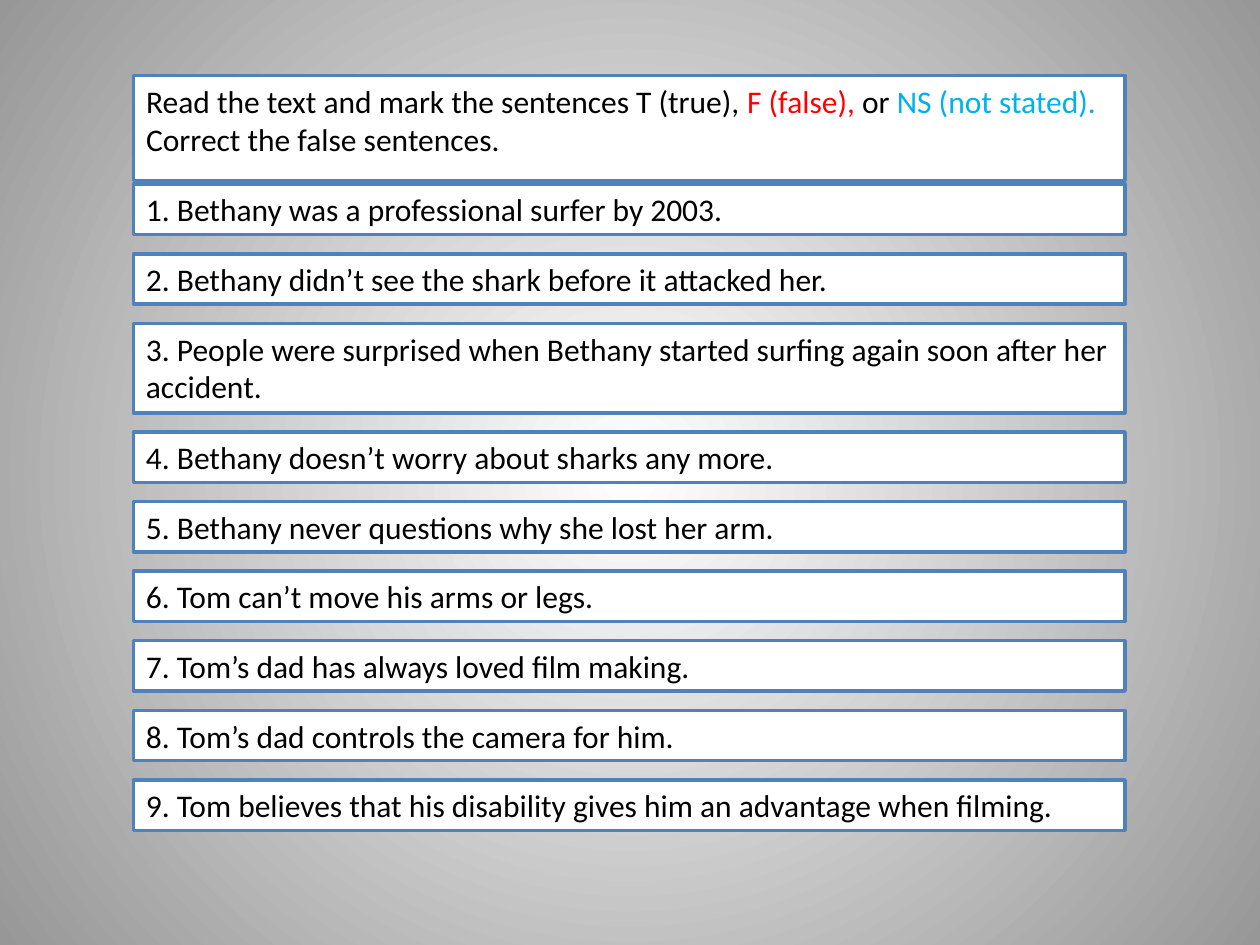
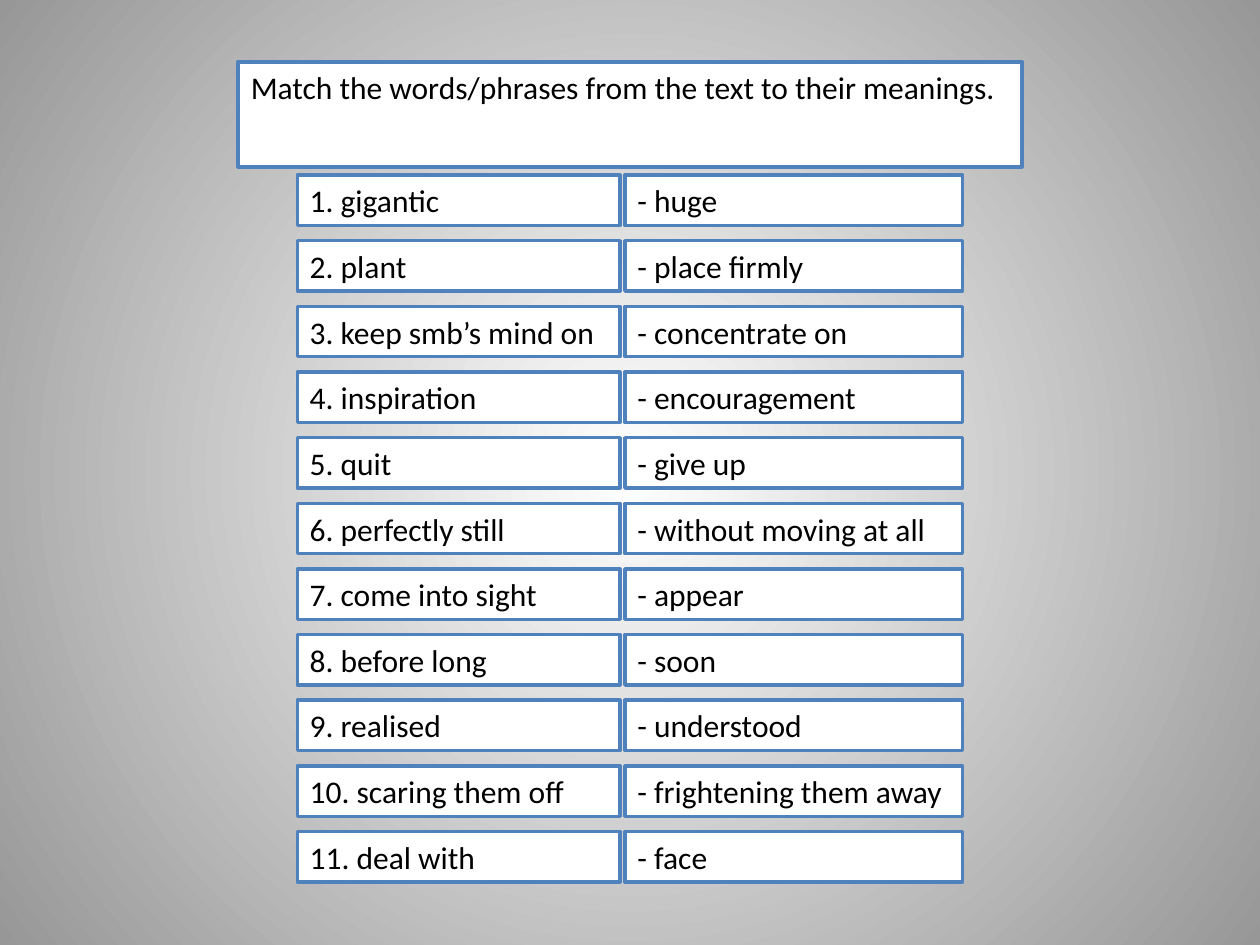
from pptx import Presentation
from pptx.dml.color import RGBColor
from pptx.enum import text
from pptx.oxml import parse_xml
from pptx.oxml.ns import nsdecls, qn
from pptx.util import Inches, Pt

WHITE = RGBColor(0xFF, 0xFF, 0xFF)
BLACK = RGBColor(0x00, 0x00, 0x00)
GREY = RGBColor(0x97, 0x97, 0x97)
BLUE = RGBColor(0x4F, 0x81, 0xBD)
RED = RGBColor(0xFF, 0x00, 0x00)
SKY = RGBColor(0x00, 0xB0, 0xF0)

ONE_LINE, TWO_LINES = 0.4, 0.71  # box heights in inches


def fill_box(box, left, top, width, height, runs):
    """Place a framed white box and write its (wording, colour) runs."""
    box.left, box.top = Inches(left), Inches(top)
    box.width, box.height = Inches(width), Inches(height)
    box.fill.solid()
    box.fill.fore_color.rgb = WHITE
    box.line.color.rgb = BLUE
    box.line.width = Pt(2)
    frame = box.text_frame
    frame.word_wrap = True
    frame.auto_size = text.MSO_AUTO_SIZE.SHAPE_TO_FIT_TEXT
    frame.vertical_anchor = text.MSO_ANCHOR.TOP
    paragraph = frame.paragraphs[0]
    paragraph.alignment = text.PP_ALIGN.LEFT
    for wording, colour in runs:
        run = paragraph.add_run()
        run.text = wording
        run.font.name = "Calibri"
        run.font.size = Pt(18)
        run.font.color.rgb = colour


def add_box(shapes, left, top, width, height, wording):
    box = shapes.add_textbox(0, 0, 0, 0)
    fill_box(box, left, top, width, height, [(wording, BLACK)])


prs = Presentation()
prs.slide_width, prs.slide_height = Inches(10), Inches(7.5)
title_only = prs.slide_layouts[5]

# Shared background: white centre fading to grey
backdrop = prs.slide_master.background.fill
backdrop.gradient()
for stop, colour, position in zip(backdrop.gradient_stops, (WHITE, GREY), (0, 1)):
    stop.color.rgb = colour
    stop.position = position
gradient = prs.slide_master.element.find(".//" + qn("a:gradFill"))
for linear in gradient.findall(qn("a:lin")):
    gradient.remove(linear)
gradient.find(qn("a:gsLst")).addnext(parse_xml(
    f'<a:path {nsdecls("a")} path="circle">'
    '<a:fillToRect l="50000" t="50000" r="50000" b="50000"/></a:path>'))

# Slide 1: true, false or not stated
quiz = prs.slides.add_slide(title_only)
quiz_left, quiz_top, quiz_width, quiz_bottom = 1.06, 0.6, 7.87, 6.59
fill_box(quiz.shapes.title, quiz_left, quiz_top, quiz_width, TWO_LINES, [
    ("Read the text and mark the sentences T (true), ", BLACK),
    ("F (false), ", RED),
    ("or ", BLACK),
    ("NS (not stated). ", SKY),
    ("Correct the false sentences.", BLACK),
])

statements = [
    ("Bethany was a professional surfer by 2003.", ONE_LINE),
    ("Bethany didn’t see the shark before it attacked her.", ONE_LINE),
    ("People were surprised when Bethany started surfing again soon after her accident.",
     TWO_LINES),
    ("Bethany doesn’t worry about sharks any more.", ONE_LINE),
    ("Bethany never questions why she lost her arm.", ONE_LINE),
    ("Tom can’t move his arms or legs.", ONE_LINE),
    ("Tom’s dad has always loved film making.", ONE_LINE),
    ("Tom’s dad controls the camera for him.", ONE_LINE),
    ("Tom believes that his disability gives him an advantage when filming.", ONE_LINE),
]
heights_total = TWO_LINES + sum(height for _, height in statements)
gap = (quiz_bottom - quiz_top - heights_total) / len(statements)
top = quiz_top + TWO_LINES + gap
for number, (statement, height) in enumerate(statements, 1):
    add_box(quiz.shapes, quiz_left, top, quiz_width, height, f"{number}. {statement}")
    top += height + gap

# Slide 2: words and their meanings
matching = prs.slides.add_slide(title_only)
fill_box(matching.shapes.title, 1.89, 0.49, 6.22, ONE_LINE, [
    ("Match the words/phrases from the text to their meanings.", BLACK),
])

pairs = [
    ("gigantic", "huge"),
    ("plant", "place firmly"),
    ("keep smb’s mind on", "concentrate on"),
    ("inspiration", "encouragement"),
    ("quit", "give up"),
    ("perfectly still", "without moving at all"),
    ("come into sight", "appear"),
    ("before long", "soon"),
    ("realised", "understood"),
    ("scaring them off", "frightening them away"),
    ("deal with", "face"),
]
first_top, last_top = 1.39, 6.6
pitch = (last_top - first_top) / (len(pairs) - 1)
words = matching.shapes.add_group_shape().shapes
for row, (word, meaning) in enumerate(pairs):
    top = first_top + row * pitch
    add_box(words, 2.36, top, 2.56, ONE_LINE, f"{row + 1}. {word}")
    add_box(matching.shapes, 4.96, top, 2.68, ONE_LINE, f"- {meaning}")

prs.save("out.pptx")
